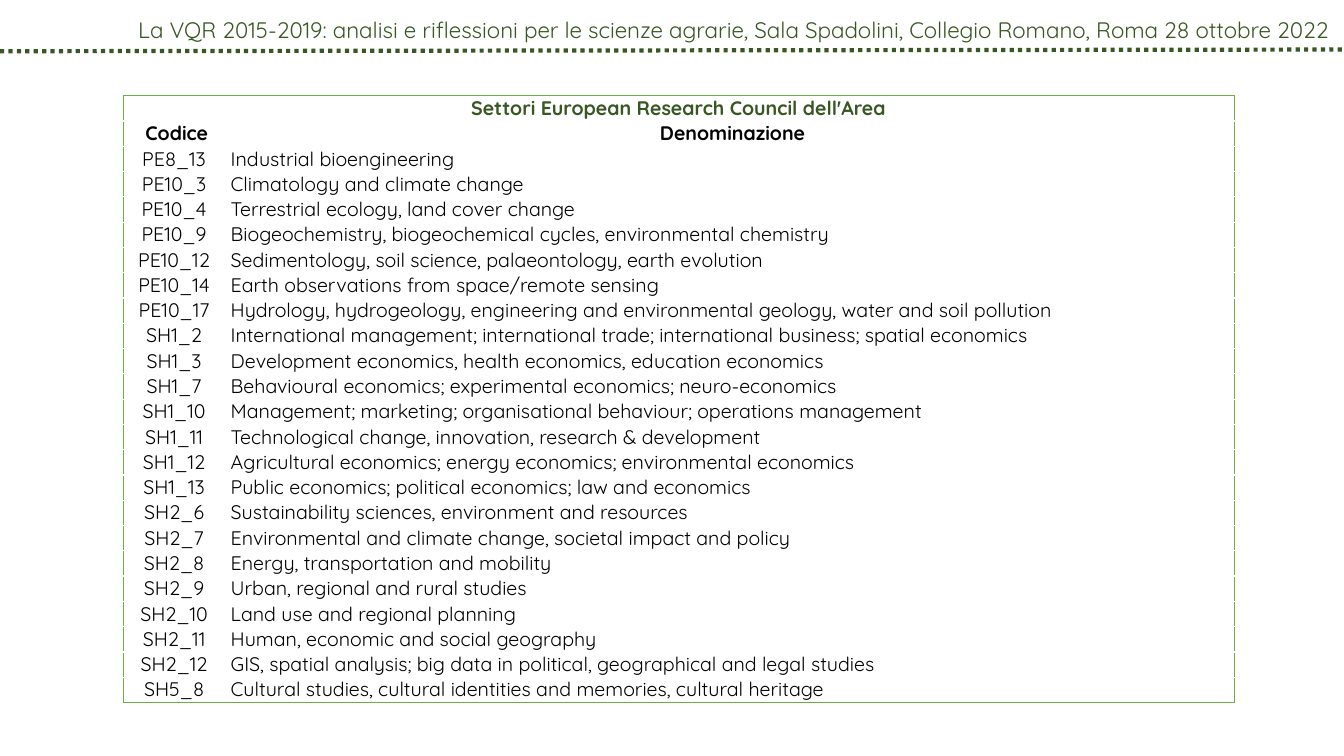
"""Build the slide that lists the European Research Council sectors of the area."""
from lxml import etree
from pptx import Presentation
from pptx.dml.color import RGBColor
from pptx.enum.dml import MSO_LINE
from pptx.enum.shapes import MSO_CONNECTOR
from pptx.enum.text import MSO_ANCHOR, MSO_AUTO_SIZE, PP_ALIGN
from pptx.oxml.ns import qn
from pptx.util import Pt

STRAIGHT = MSO_CONNECTOR.STRAIGHT
DOTTED = MSO_LINE.ROUND_DOT
MIDDLE = MSO_ANCHOR.MIDDLE
FIT_SHAPE = MSO_AUTO_SIZE.SHAPE_TO_FIT_TEXT
LEFT, CENTER, RIGHT = PP_ALIGN.LEFT, PP_ALIGN.CENTER, PP_ALIGN.RIGHT

FONT = "Quicksand"
DARK_GREEN, GREEN, BLACK = "385723", "70AD47", "000000"
NBSP = chr(160)
SLIDE_W, SLIDE_H = 960, 540
COL_WIDTHS = (77, 717)
ROW_HEIGHT = 18.06

EVENT = ("La VQR 2015-2019: analisi e riflessioni per le scienze agrarie, "
         "Sala Spadolini, Collegio Romano, Roma 28 ottobre 2022")
TITLE = "Settori European Research Council dell'Area"
HEADINGS = ("Codice", "Denominazione")
SECTORS = [
    ("PE8_13", "Industrial bioengineering"),
    ("PE10_3", "Climatology and climate change"),
    ("PE10_4", "Terrestrial ecology, land cover change"),
    ("PE10_9", "Biogeochemistry, biogeochemical cycles, environmental chemistry"),
    ("PE10_12", "Sedimentology, soil science, palaeontology, earth evolution"),
    ("PE10_14", "Earth observations from space/remote sensing"),
    ("PE10_17", "Hydrology, hydrogeology, engineering and environmental geology, "
                "water and soil pollution"),
    ("SH1_2", "International management; international trade; "
              "international business; spatial economics"),
    ("SH1_3", "Development economics, health economics, education economics"),
    ("SH1_7", "Behavioural economics; experimental economics; neuro-economics"),
    ("SH1_10", "Management; marketing; organisational behaviour; operations management"),
    ("SH1_11", "Technological change, innovation, research & development"),
    ("SH1_12", "Agricultural economics; energy economics; environmental economics"),
    ("SH1_13", "Public economics; political economics; law and economics"),
    ("SH2_6", "Sustainability sciences, environment and resources"),
    ("SH2_7", "Environmental and climate change, societal impact and policy"),
    ("SH2_8", "Energy, transportation and mobility"),
    ("SH2_9", "Urban, regional and rural studies"),
    ("SH2_10", "Land use and regional planning"),
    ("SH2_11", "Human, economic and social geography"),
    ("SH2_12", "GIS, spatial analysis; big data in political, geographical and legal studies"),
    ("SH5_8", "Cultural studies, cultural identities and memories, cultural heritage"),
]


def rgb(color):
    """Return the colour for a hex string."""
    return RGBColor.from_string(color)


def write(tf, text, size, color, align, bold=False):
    """Put one formatted paragraph into a text frame."""
    p = tf.paragraphs[0]
    p.text = text
    p.alignment = align
    p.font.name = FONT
    p.font.size = Pt(size)
    p.font.bold = bold
    p.font.color.rgb = rgb(color)


def add_header(slide):
    """Add the event line at the top right."""
    tf = slide.shapes.add_textbox(Pt(-3.6), Pt(8), Pt(SLIDE_W), Pt(26.6)).text_frame
    tf.word_wrap = True
    tf.auto_size = FIT_SHAPE
    write(tf, EVENT, 16, DARK_GREEN, RIGHT)


def add_dotted_rule(slide):
    """Add the dotted line under the header."""
    line = slide.shapes.add_connector(STRAIGHT, Pt(0), Pt(36.6), Pt(SLIDE_W), Pt(35.4))
    line.line.color.rgb = rgb(DARK_GREEN)
    line.line.width = Pt(3)
    line.line.dash_style = DOTTED
    etree.SubElement(line._element.spPr, qn("a:effectLst"))


def set_borders(cell, sides):
    """Draw thin green borders on the given sides, listed in the order L, R, T, B."""
    tc_pr = cell._tc.get_or_add_tcPr()
    for i, side in enumerate(sides):
        ln = etree.Element(qn(f"a:ln{side}"), w=str(Pt(0.5)))
        fill = etree.SubElement(ln, qn("a:solidFill"))
        etree.SubElement(fill, qn("a:srgbClr"), val=GREEN)
        tc_pr.insert(i, ln)


def fill_cell(cell, text, color, align, bold):
    """Set the text, margins and empty fill of a cell."""
    cell.margin_left = cell.margin_right = cell.margin_top = Pt(0)
    cell.margin_bottom = Pt(0.5)
    cell.vertical_anchor = MIDDLE
    cell.fill.background()
    write(cell.text_frame, text, 14, color, align, bold)


def add_sector_table(slide):
    """Add the framed table of sector codes and names."""
    rows = [(TITLE, ""), HEADINGS]
    rows += [(code + NBSP, name + NBSP) for code, name in SECTORS]
    last = len(rows) - 1
    table = slide.shapes.add_table(len(rows), 2, Pt(87.8), Pt(68.4), Pt(sum(COL_WIDTHS)),
                                   Pt(ROW_HEIGHT * len(rows))).table
    table.first_row = table.horz_banding = False
    for column, width in zip(table.columns, COL_WIDTHS):
        column.width = Pt(width)
    for r, texts in enumerate(rows):
        table.rows[r].height = Pt(ROW_HEIGHT)
        for c, text in enumerate(texts):
            cell = table.cell(r, c)
            heading = r < 2
            fill_cell(cell, text, DARK_GREEN if r == 0 else BLACK,
                      CENTER if heading or c == 0 else LEFT, heading)
            on_edge = {"L": c == 0, "R": c == 1 or r == 0, "T": r == 0, "B": r == last}
            set_borders(cell, [side for side, drawn in on_edge.items() if drawn])
    table.cell(0, 0).merge(table.cell(0, 1))


def main():
    """Build and save the slide."""
    prs = Presentation()
    prs.slide_width, prs.slide_height = Pt(SLIDE_W), Pt(SLIDE_H)
    slide = prs.slides.add_slide(prs.slide_layouts[6])
    add_header(slide)
    add_dotted_rule(slide)
    add_sector_table(slide)
    prs.save("out.pptx")


if __name__ == "__main__":
    main()
